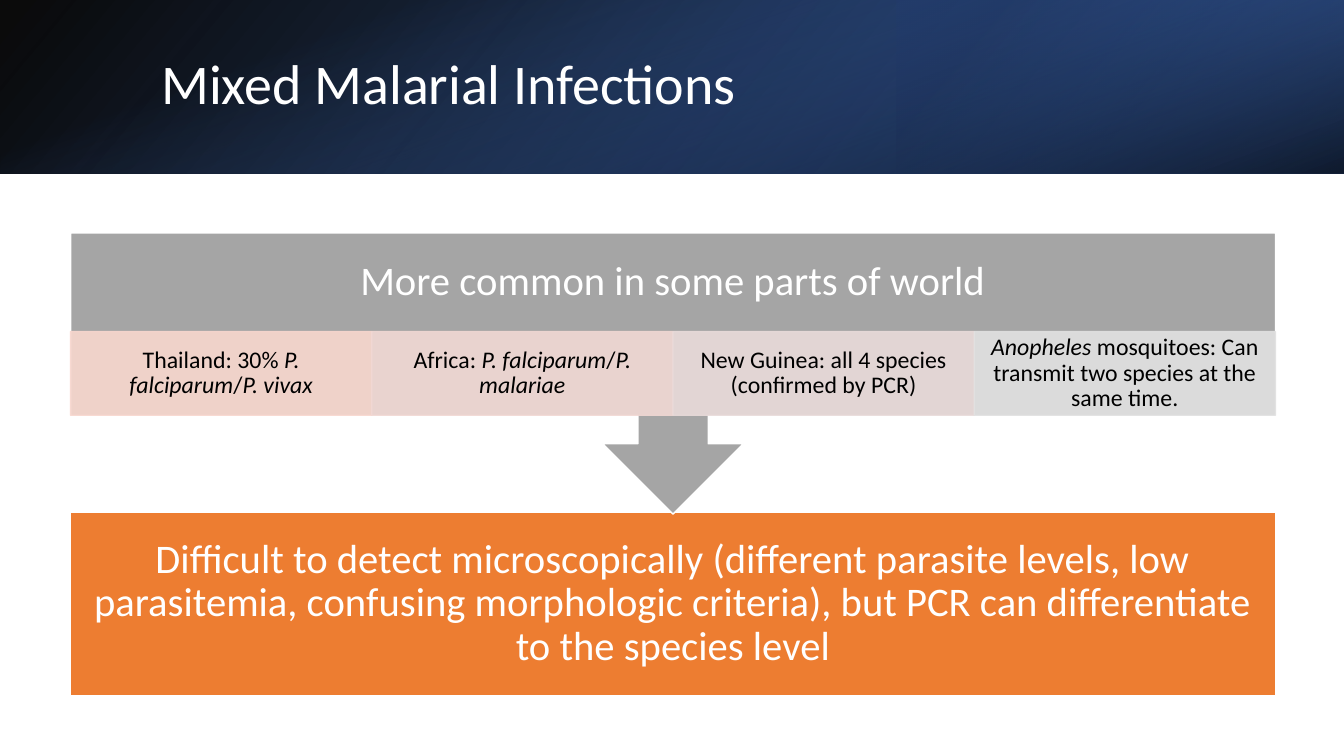
import dataclasses

import lxml.etree
import pptx
import pptx.dml.color
import pptx.enum.shapes
import pptx.enum.text
import pptx.oxml.ns
import pptx.util

Inches = pptx.util.Inches
Shape = pptx.enum.shapes.MSO_SHAPE
Align = pptx.enum.text.PP_ALIGN
Rgb = pptx.dml.color.RGBColor.from_string
qn = pptx.oxml.ns.qn


@dataclasses.dataclass(frozen=True)
class Theme:
    font: str = "Calibri"
    white: str = "FFFFFF"
    black: str = "000000"
    navy: str = "203864"
    deep: str = "2F5597"
    blue: str = "4472C4"
    orange: str = "ED7D31"
    gray: str = "A5A5A5"
    tints: tuple = ("F8D7CE", "F1D8D4", "E9DBDA", "E1E1E1")
    title: int = 40
    large: int = 29
    small: int = 17


class Page:
    def __init__(self, deck, theme):
        self.theme = theme
        self.slide = deck.slides.add_slide(deck.slide_layouts[5])

    def shape(self, kind, place, turn=0):
        item = self.slide.shapes.add_shape(kind, *map(Inches, place))
        item.shadow.inherit = False
        item.rotation = turn
        return item

    def band(self, place, stops, angle, turn=0, flip=False):
        item = self.shape(Shape.RECTANGLE, place, turn)
        item.line.fill.background()
        if flip:
            item._element.spPr.xfrm.set("flipH", "1")
        item.fill.gradient()
        grad = item._element.spPr.find(qn("a:gradFill"))
        for child in list(grad):
            grad.remove(child)
        steps = lxml.etree.SubElement(grad, qn("a:gsLst"))
        for spot, color, alpha in stops:
            step = lxml.etree.SubElement(steps, qn("a:gs"), pos=str(spot * 1000))
            tone = lxml.etree.SubElement(step, qn("a:srgbClr"), val=color)
            lxml.etree.SubElement(tone, qn("a:alpha"), val=str(alpha * 1000))
        lxml.etree.SubElement(grad, qn("a:lin"), ang=str(angle * 60000), scaled="0")

    def block(self, place, fill, line, kind=Shape.RECTANGLE, turn=0, alpha=100):
        item = self.shape(kind, place, turn)
        item.fill.solid()
        item.fill.fore_color.rgb = Rgb(fill)
        item.line.color.rgb = Rgb(line)
        item.line.width = pptx.util.Pt(1)
        if alpha < 100:
            for tone in item._element.spPr.iter(qn("a:srgbClr")):
                lxml.etree.SubElement(tone, qn("a:alpha"), val=str(alpha * 1000))
        return item

    def letter(self, item, runs, size, color, inset, align=Align.CENTER):
        frame = item.text_frame
        frame.word_wrap = True
        frame.auto_size = pptx.enum.text.MSO_AUTO_SIZE.NONE
        frame.vertical_anchor = pptx.enum.text.MSO_ANCHOR.MIDDLE
        frame.margin_left = frame.margin_right = Inches(inset[0])
        frame.margin_top = frame.margin_bottom = Inches(inset[1])
        para = frame.paragraphs[0]
        para.alignment = align
        para.line_spacing = 0.9
        for text, slant in runs:
            run = para.add_run()
            run.text = text
            run.font.name = self.theme.font
            run.font.size = pptx.util.Pt(size)
            run.font.color.rgb = Rgb(color)
            run.font.italic = slant

    def label(self, place, text, size, color, inset):
        item = self.slide.shapes.add_textbox(*map(Inches, place))
        self.letter(item, [(text, False)], size, color, inset)

    def title(self, place, text):
        item = self.slide.shapes.title
        item.left, item.top, item.width, item.height = map(Inches, place)
        self.slide.shapes._spTree.append(item._element)
        self.letter(item, [(text, False)], self.theme.title, self.theme.white,
                    (0.1, 0.05), Align.LEFT)


def main():
    deck = pptx.Presentation()
    wide, band = 13.33, 1.72
    deck.slide_width, deck.slide_height = Inches(wide), Inches(7.5)
    theme = Theme()
    page = Page(deck, theme)

    page.band((0, 0, wide, band),
              [(0, theme.black, 96), (100, theme.deep, 100)], 140, flip=True)
    page.band((8.89, 0, 4.44, band),
              [(19, theme.navy, 68), (100, theme.blue, 79)], 320, 180, True)
    shift = (wide - band) / 2
    page.band((shift, -shift, band, wide),
              [(23, theme.blue, 0), (99, theme.black, 74)], 340, 90)
    page.title((1.5, 0.38, 10.98, 0.96), "Mixed Malarial Infections")

    left, width, pad = 0.7, 11.95, (0.23, 0.23)
    result = page.block((left, 5.08, width, 1.82), theme.orange, theme.white)
    page.letter(result, [(
        "Difficult to detect microscopically (different parasite levels, low "
        "parasitemia, confusing morphologic criteria), but PCR can "
        "differentiate to the species level", False)],
        theme.large, theme.white, pad)

    page.block((left, 2.31, width, 2.79), theme.gray, theme.white,
               Shape.UP_ARROW_CALLOUT, 180)
    page.label((left, 2.31, width, 0.98), "More common in some parts of world",
               theme.large, theme.white, pad)

    facts = [
        [("Thailand: 30% ", False), ("P. falciparum", True), ("/", False),
         ("P. vivax", True)],
        [("Africa: ", False), ("P. falciparum", True), ("/", False),
         ("P. malariae", True)],
        [("New Guinea: all 4 species (confirmed by PCR)", False)],
        [("Anopheles", True),
         (" mosquitoes: Can transmit two species at the same time.", False)],
    ]
    cell = width / len(facts)
    for col, (runs, tint) in enumerate(zip(facts, theme.tints)):
        item = page.block((left + col * cell, 3.29, cell, 0.83), tint, tint, alpha=90)
        page.letter(item, runs, theme.small, theme.black, (0.13, 0.02))

    deck.save("out.pptx")


if __name__ == "__main__":
    main()
